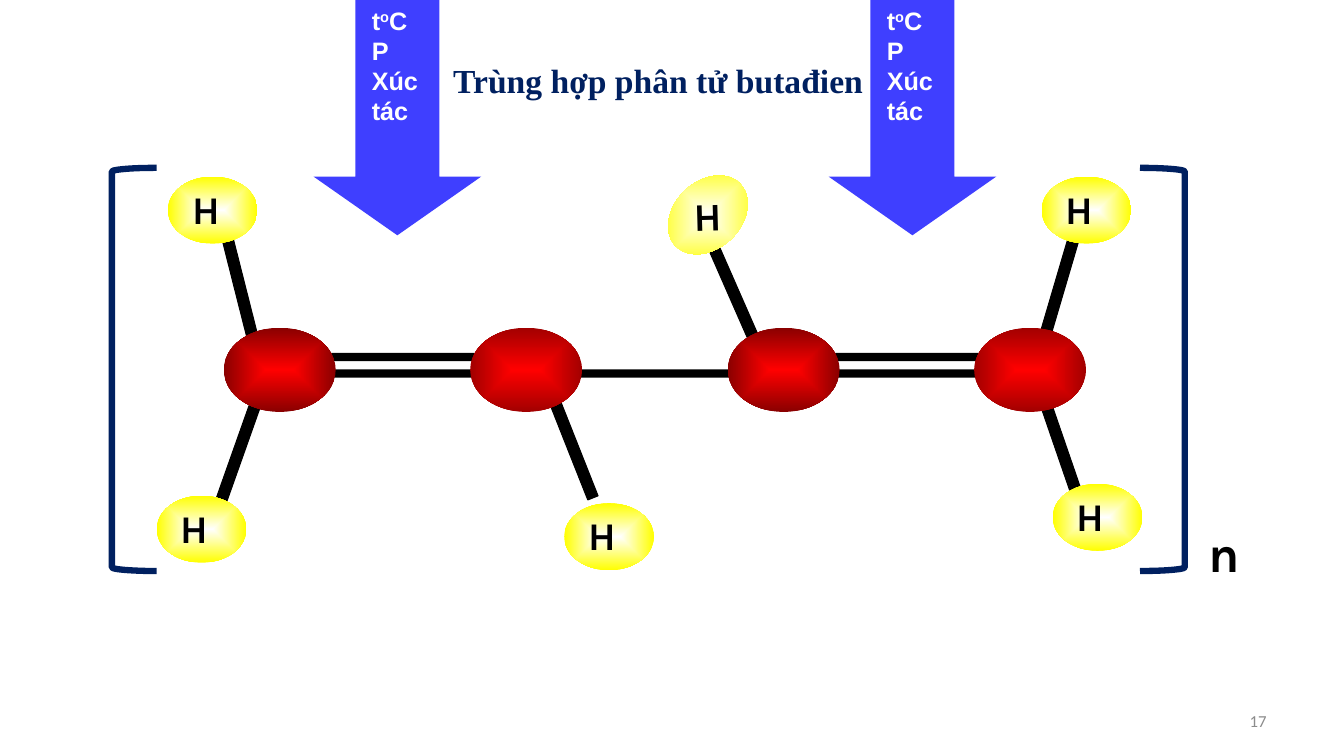
import pptx
import pptx.dml.color
import pptx.enum.shapes
import pptx.enum.text
import pptx.oxml
import pptx.util
from pptx.oxml.ns import nsdecls, qn

Cm = pptx.util.Cm
Pt = pptx.util.Pt
RGBColor = pptx.dml.color.RGBColor
MSO_SHAPE = pptx.enum.shapes.MSO_SHAPE
PP_ALIGN = pptx.enum.text.PP_ALIGN
MSO_ANCHOR = pptx.enum.text.MSO_ANCHOR

BLACK = RGBColor(0x00, 0x00, 0x00)
WHITE = RGBColor(0xFF, 0xFF, 0xFF)
YELLOW = RGBColor(0xFF, 0xFF, 0x00)
RED = RGBColor(0xFF, 0x00, 0x00)
MAROON = RGBColor(0x8A, 0x00, 0x00)
CRIMSON = RGBColor(0xA2, 0x00, 0x00)
BLUE = RGBColor(0x3F, 0x3F, 0xFF)
NAVY = RGBColor(0x00, 0x20, 0x60)
GREY = RGBColor(0x8C, 0x8C, 0x8C)

CARBON_TOP = 8.26
CARBONS = [(5.64, MAROON), (11.85, CRIMSON), (18.34, MAROON), (24.55, CRIMSON)]
# left, top, length of the bonds between carbons
CHAIN_BONDS = [(6.77, 8.89, 6.21), (6.5, 9.31, 6.33), (13.26, 9.31, 6.21),
               (20.49, 8.89, 5.19), (19.47, 9.31, 6.33)]
# left, top, rotation of the bonds to hydrogen
SIDE_BONDS = [(4.57, 7.26, 75.8), (4.55, 11.1, 289.5), (12.87, 11, 68.4),
              (16.96, 7.21, 66.3), (25.17, 7.14, 286.4), (25.17, 11, 71)]
HYDROGENS = [(4.23, 4.45), (3.95, 12.49), (14.22, 12.68), (26.25, 4.45), (26.53, 12.19)]


class MoleculeSlide:
    def __init__(self, prs):
        self.s = prs.slides.add_slide(prs.slide_layouts[5])

    def style(self, p, font, size, color, bold=True, align=PP_ALIGN.LEFT):
        p.alignment = align
        p.font.name, p.font.size, p.font.bold = font, Pt(size), bold
        p.font.color.rgb = color

    def title(self, text, left, top, width, height):
        sp = self.s.shapes.title
        sp.left, sp.top, sp.width, sp.height = Cm(left), Cm(top), Cm(width), Cm(height)
        tf = sp.text_frame
        tf.text = text
        tf.word_wrap = True
        tf.auto_size = pptx.enum.text.MSO_AUTO_SIZE.NONE
        tf.vertical_anchor = MSO_ANCHOR.TOP
        self.style(tf.paragraphs[0], "Times New Roman", 24, NAVY, align=PP_ALIGN.CENTER)

    def text(self, text, left, top, width, height, font, size, color, wrap=True, **style):
        sp = self.s.shapes.add_textbox(Cm(left), Cm(top), Cm(width), Cm(height))
        tf = sp.text_frame
        tf.word_wrap = wrap
        tf.text = text
        for p in tf.paragraphs:
            self.style(p, font, size, color, **style)
        return sp

    def shape(self, kind, left, top, width, height, fill=None, line=None, weight=0.75):
        sp = self.s.shapes.add_shape(kind, Cm(left), Cm(top), Cm(width), Cm(height))
        sp.shadow.inherit = False
        if fill is None:
            sp.fill.background()
        else:
            sp.fill.solid()
            sp.fill.fore_color.rgb = fill
        if line is None:
            sp.line.fill.background()
        else:
            sp.line.color.rgb = line
            sp.line.width = Pt(weight)
        return sp

    def ball(self, left, top, width, height, centre, edge):
        """Ellipse shaded from its centre to its edge."""
        sp = self.shape(MSO_SHAPE.OVAL, left, top, width, height)
        sp.fill.gradient()
        for stop, position, color in zip(sp.fill.gradient_stops, (0, 1), (centre, edge)):
            stop.position = position
            stop.color.rgb = color
        grad = sp._element.spPr.find(qn("a:gradFill"))
        grad.replace(grad.find(qn("a:lin")), pptx.oxml.parse_xml(
            f'<a:path {nsdecls("a")} path="shape">'
            '<a:fillToRect l="50000" t="50000" r="50000" b="50000"/></a:path>'))
        return sp

    def carbon(self, left, edge):
        self.ball(left, CARBON_TOP, 2.82, 2.12, RED, edge)

    def hydrogen(self, left, top, dx=0.36, dy=0.09, ball_turn=0, label_turn=0):
        self.ball(left, top, 2.26, 1.69, WHITE, YELLOW).rotation = ball_turn
        label = self.text("H", left + dx, top + dy, 1.27, 1.45, "Karla", 28, BLACK, wrap=False)
        label.rotation = label_turn

    def bond(self, left, top, length, thickness, turn=0, line=None):
        sp = self.shape(MSO_SHAPE.RECTANGLE, left, top, length, thickness, BLACK, line)
        sp.rotation = turn

    def condition_arrow(self, left):
        """Down arrow naming the reaction conditions."""
        sp = self.shape(MSO_SHAPE.DOWN_ARROW, left, 0, 4.23, 5.93, BLUE)
        sp.adjustments[0], sp.adjustments[1] = 0.5, 0.35
        label = self.text("\nP\nXúc tác", left + 1.22, 0, 2.37, 3.33, "Arial", 18, WHITE)
        p = label.text_frame.paragraphs[0]
        for part in "toC":
            r = p.add_run()
            r.text = part
            if part == "o":
                r._r.get_or_add_rPr().set("baseline", "30000")

    def bracket(self, kind, left):
        self.shape(kind, left, 4.23, 1.13, 10.16, line=NAVY, weight=4.5)


def main():
    prs = pptx.Presentation()
    prs.slide_width, prs.slide_height = Cm(33.87), Cm(19.05)
    slide = MoleculeSlide(prs)

    slide.title("Trùng hợp phân tử butađien", 10.21, 1.37, 12.75, 1.27)
    for left, top, length in CHAIN_BONDS:
        slide.bond(left, top, length, 0.21)
    for left, top, turn in SIDE_BONDS:
        slide.bond(left, top, 3.03, 0.28, turn, BLACK)
    for left, top in HYDROGENS:
        slide.hydrogen(left, top)
    slide.hydrogen(16.71, 4.57, dx=0.53, dy=0.13, ball_turn=136.2, label_turn=-1.5)
    for left, edge in CARBONS:
        slide.carbon(left, edge)
    for left in (7.9, 20.88):
        slide.condition_arrow(left)
    slide.bracket(MSO_SHAPE.LEFT_BRACKET, 2.82)
    slide.bracket(MSO_SHAPE.RIGHT_BRACKET, 28.73)
    slide.text("n", 30.21, 13.04, 2.54, 1.8, "Karla", 36, BLACK)
    number = slide.text("17", 24.27, 17.66, 7.9, 1.02, "Calibri", 12, GREY,
                        bold=False, align=PP_ALIGN.RIGHT)
    number.text_frame.vertical_anchor = MSO_ANCHOR.MIDDLE

    prs.save("out.pptx")


if __name__ == "__main__":
    main()
